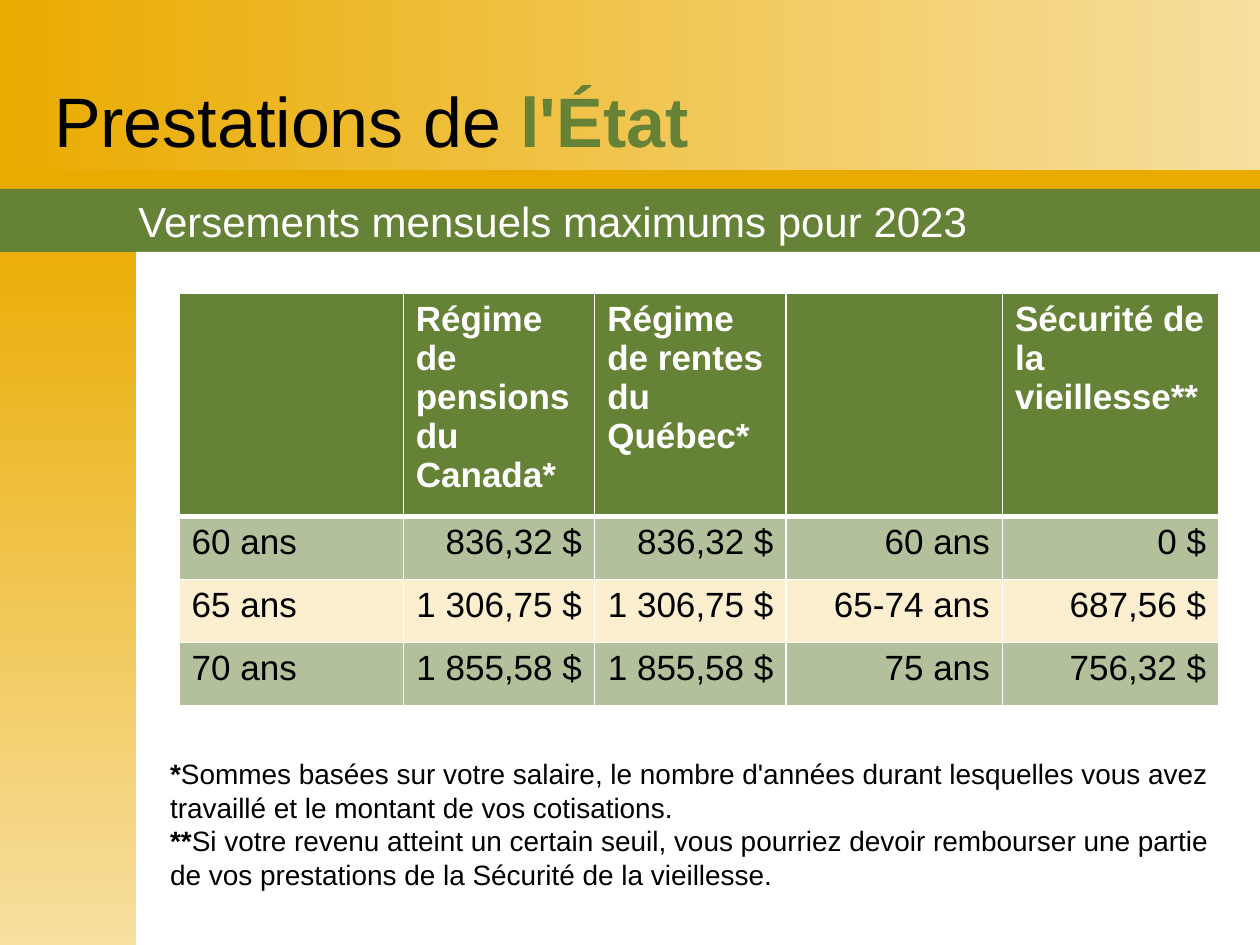
from lxml.etree import SubElement
from pptx import Presentation
from pptx.dml.color import RGBColor
from pptx.enum.shapes import MSO_SHAPE as Preset
from pptx.enum.text import MSO_ANCHOR as Anchor, PP_ALIGN as Align
from pptx.oxml.ns import qn
from pptx.util import Cm, Pt

HEX = {"gold": "EAAB00", "sand": "F7DF9F", "green": "658237", "sage": "B2C09B",
       "cream": "FBEFCF", "white": "FFFFFF", "black": "000000"}

# left, top, width, height in cm; one colour, or two with an angle
BANDS = [
    ((0, 0, 25.4, 4.19), ["gold"], 0),
    ((0, -0.38, 25.4, 3.81), ["gold", "sand"], 0),
    ((0, 4.24, 2.75, 14.81), ["gold", "sand"], 270),
    ((-0.08, 3.81, 25.48, 1.27), ["green"], 0),
    ((2.75, 5.08, 22.65, 13.97), ["white"], 0),
]
# place, size, paragraphs of (text, colour, bold)
TEXTS = [
    ((2.54, 3.81, 21.59, 1.27), 24,
     [[("Versements mensuels maximums pour 2023", "white", False)]]),
    ((3.18, 14.81, 21.59, 3.28), 16,
     [[("*", "black", True),
       ("Sommes basées sur votre salaire, le nombre d'années durant lesquelles "
        "vous avez travaillé et le montant de vos cotisations.", "black", False)],
      [("**", "black", True),
       ("Si votre revenu atteint un certain seuil, vous pourriez devoir rembourser "
        "une partie de vos prestations de la Sécurité de la vieillesse.",
        "black", False)]]),
    ((0.84, 1.47, 21.59, 1.91), 40,
     [[("Prestations de ", "black", False), ("l'État", "green", True)]]),
]
ROWS = [
    ["", "Régime de pensions du Canada*", "Régime de rentes du Québec*", "",
     "Sécurité de la vieillesse**"],
    ["60 ans", "836,32 $", "836,32 $", "60 ans", "0 $"],
    ["65 ans", "1 306,75 $", "1 306,75 $", "65-74 ans", "687,56 $"],
    ["70 ans", "1 855,58 $", "1 855,58 $", "75 ans", "756,32 $"],
]
SPOT = (3.61, 5.92)
WIDTHS = [4.52, 3.86, 3.86, 4.36, 4.36]
HEIGHTS = [3.3, 1.27, 1.27, 1.27]


def rgb(name):
    return RGBColor.from_string(HEX[name])


def style(run, size, tint, bold):
    form = {"name": "Arial", "size": Pt(size), "bold": bold}
    for key, value in form.items():
        setattr(run.font, key, value)
    run.font.color.rgb = rgb(tint)


def band(slide, place, tints, angle):
    shape = slide.shapes.add_shape(Preset.RECTANGLE, *map(Cm, place))
    shape.shadow.inherit = False
    shape.line.fill.background()
    if len(tints) == 1:
        shape.fill.solid()
        shape.fill.fore_color.rgb = rgb(tints[0])
        return
    shape.fill.gradient()
    shape.fill.gradient_angle = angle
    for stop, tint in zip(shape.fill.gradient_stops, tints):
        stop.color.rgb = rgb(tint)


def label(slide, place, size, paras):
    frame = slide.shapes.add_textbox(*map(Cm, place)).text_frame
    frame.word_wrap = True
    frame.vertical_anchor = Anchor.BOTTOM
    for i, parts in enumerate(paras):
        para = frame.add_paragraph() if i else frame.paragraphs[0]
        for text, tint, bold in parts:
            run = para.add_run()
            run.text = text
            style(run, size, tint, bold)


def border(cell, head):
    """White rules, thicker between the header and the body."""
    props = cell._tc.get_or_add_tcPr()
    for side in "LRTB":
        width = Pt(3 if head and side == "B" else 1)
        line = SubElement(props, qn(f"a:ln{side}"), w=str(width))
        fill = SubElement(line, qn("a:solidFill"))
        SubElement(fill, qn("a:srgbClr"), val=HEX["white"])


def grid(slide):
    size = (sum(WIDTHS), sum(HEIGHTS))
    table = slide.shapes.add_table(len(ROWS), len(WIDTHS),
                                   *map(Cm, SPOT + size)).table
    for col, width in zip(table.columns, WIDTHS):
        col.width = Cm(width)
    for r, (texts, height) in enumerate(zip(ROWS, HEIGHTS)):
        table.rows[r].height = Cm(height)
        head = r == 0
        tint = "green" if head else ("cream", "sage")[r % 2]
        for c, text in enumerate(texts):
            cell = table.cell(r, c)
            border(cell, head)
            cell.fill.solid()
            cell.fill.fore_color.rgb = rgb(tint)
            para = cell.text_frame.paragraphs[0]
            para.alignment = Align.LEFT if head or c == 0 else Align.RIGHT
            if text:
                run = para.add_run()
                run.text = text
                style(run, 20, "white" if head else "black", head)


def main():
    deck = Presentation()
    deck.slide_width, deck.slide_height = Cm(25.4), Cm(19.05)
    slide = deck.slides.add_slide(deck.slide_layouts[6])
    for item in BANDS:
        band(slide, *item)
    for item in TEXTS:
        label(slide, *item)
    grid(slide)
    deck.save("out.pptx")


if __name__ == "__main__":
    main()
